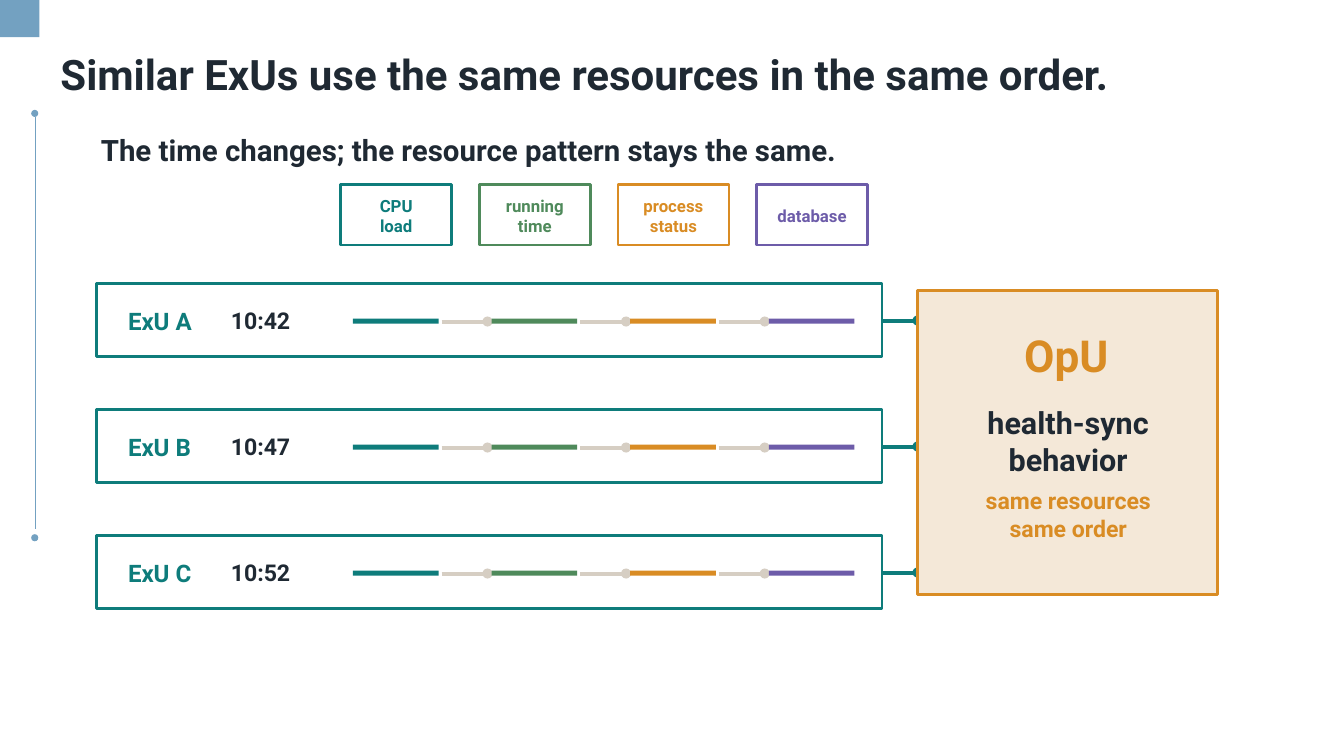
from lxml import etree
from pptx import Presentation
from pptx.dml.color import RGBColor
from pptx.enum.shapes import MSO_CONNECTOR, MSO_SHAPE
from pptx.enum.text import MSO_ANCHOR, MSO_AUTO_SIZE, PP_ALIGN
from pptx.oxml.ns import qn
from pptx.util import Inches, Pt

COLORS = {
    "ink": "1F2933",
    "white": "FFFFFF",
    "teal": "0E7C7B",
    "green": "4F8A5B",
    "orange": "D98C24",
    "purple": "6D5CA9",
    "sand": "D6CEC3",
    "cream": "F4E8D8",
    "blue": "73A1C1",
}


def write(box, lines, size, color, align=PP_ALIGN.LEFT, anchor=MSO_ANCHOR.TOP):
    frame = box.text_frame
    frame.auto_size = MSO_AUTO_SIZE.NONE
    frame.word_wrap = True
    frame.vertical_anchor = anchor
    frame.margin_left = frame.margin_right = 0
    frame.margin_top = frame.margin_bottom = 0
    for index, line in enumerate(lines):
        paragraph = frame.add_paragraph() if index else frame.paragraphs[0]
        paragraph.alignment = align
        run = paragraph.add_run()
        run.text = line
        run.font.name = "Roboto"
        run.font.size = Pt(size)
        run.font.bold = True
        run.font.color.rgb = RGBColor.from_string(COLORS[color])


def block(kind, place, fill, outline=None, weight=1.88):
    shape = slide.shapes.add_shape(kind, *map(Inches, place))
    shape.shadow.inherit = False
    shape.fill.solid()
    shape.fill.fore_color.rgb = RGBColor.from_string(COLORS[fill])
    if outline:
        shape.line.color.rgb = RGBColor.from_string(COLORS[outline])
        shape.line.width = Pt(weight)
    else:
        shape.line.fill.background()


deck = Presentation()
deck.slide_width = Inches(13.33)
deck.slide_height = Inches(7.5)
slide = deck.slides.add_slide(deck.slide_layouts[5])

title = slide.shapes.title
title.left, title.top = Inches(0.6), Inches(0.48)
title.width, title.height = Inches(11.67), Inches(0.69)
write(title, ["Similar ExUs use the same resources in the same order."], 30, "ink")

subtitle = slide.shapes.add_textbox(Inches(1), Inches(1.31), Inches(8.12), Inches(0.35))
write(subtitle, ["The time changes; the resource pattern stays the same."], 21, "ink")

resources = [
    (["CPU", "load"], "teal"),
    (["running", "time"], "green"),
    (["process", "status"], "orange"),
    (["database"], "purple"),
]
units = [("ExU A", "10:42"), ("ExU B", "10:47"), ("ExU C", "10:52")]
column_step = 1.375
row_step = 1.25

for column, (words, color) in enumerate(resources):
    left = 3.38 + column * column_step
    block(MSO_SHAPE.RECTANGLE, (left, 1.83, 1.1, 0.6), "white", color)
    caption = slide.shapes.add_textbox(
        Inches(left + 0.08), Inches(1.94), Inches(0.94), Inches(0.4))
    write(caption, words, 12, color, PP_ALIGN.CENTER, MSO_ANCHOR.MIDDLE)

links = [(0.35, 1.16, 0.35, 5.25, "blue", 0.75)]
for row, (unit, time) in enumerate(units):
    top = 2.81 + row * row_step
    block(MSO_SHAPE.RECTANGLE, (0.96, top, 7.79, 0.73), "white", "teal")
    for text, left, width, size, color in [
        (unit, 1.27, 0.9, 17.2, "teal"),
        (time, 2.29, 0.75, 16.5, "ink"),
    ]:
        label = slide.shapes.add_textbox(
            Inches(left), Inches(top + 0.23), Inches(width), Inches(0.29))
        write(label, [text], size, color)
    for gap in range(len(resources) - 1):
        left = 4.38 + gap * column_step
        links.append((left, top + 0.38, left + 0.46, top + 0.38, "sand", 2.9))
    links.append((8.75, top + 0.37, 9.1, top + 0.37, "teal", 2.9))

for x1, y1, x2, y2, color, weight in links:
    link = slide.shapes.add_connector(
        MSO_CONNECTOR.STRAIGHT, *map(Inches, (x1, y1, x2, y2)))
    link.line.color.rgb = RGBColor.from_string(COLORS[color])
    link.line.width = Pt(weight)
    etree.SubElement(link._element.spPr, qn("a:effectLst"))

for row in range(len(units)):
    top = 2.81 + row * row_step
    for column, (words, color) in enumerate(resources):
        left = 3.5 + column * column_step
        if column:
            block(MSO_SHAPE.OVAL, (left - 0.09, top + 0.33, 0.1, 0.1), "sand")
        block(MSO_SHAPE.RECTANGLE, (left, top + 0.35, 0.85, 0.05), color)
    block(MSO_SHAPE.OVAL, (9.05, top + 0.32, 0.1, 0.1), "teal")

block(MSO_SHAPE.RECTANGLE, (9.1, 2.88, 2.98, 3.02), "cream", "orange", 2.25)
for place, lines, size, color in [
    ((9.9, 3.23, 1.35, 0.58), ["OpU"], 31.5, "orange"),
    ((9.5, 4, 2.19, 0.75), ["health-sync behavior"], 21.8, "ink"),
    ((9.67, 4.81, 1.85, 0.58), ["same resources", "same order"], 16.5, "orange"),
]:
    summary = slide.shapes.add_textbox(*map(Inches, place))
    write(summary, lines, size, color, PP_ALIGN.CENTER, MSO_ANCHOR.MIDDLE)

block(MSO_SHAPE.RECTANGLE, (0, 0, 0.39, 0.37), "blue")
for top in (1.09, 5.3):
    block(MSO_SHAPE.OVAL, (0.31, top, 0.07, 0.07), "blue")

deck.save("out.pptx")
